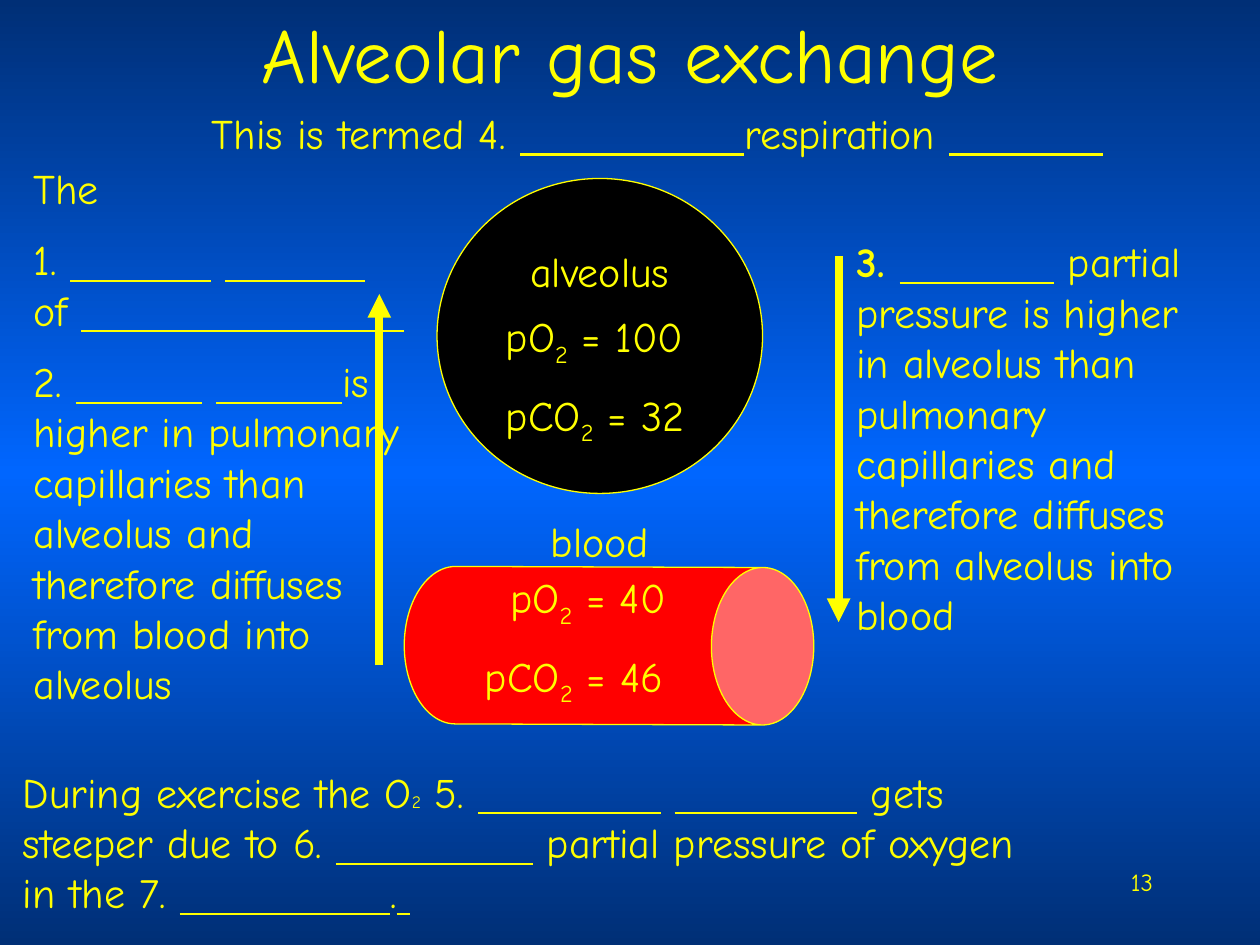
"""Build the alveolar gas exchange slide with fill-in blanks."""
import copy
import pptx
import pptx.util
import pptx.dml.color
import pptx.enum.shapes
import pptx.enum.text
import pptx.oxml.ns

YELLOW = pptx.dml.color.RGBColor(0xFF, 0xFF, 0x00)
BLACK = pptx.dml.color.RGBColor(0x00, 0x00, 0x00)
RED = pptx.dml.color.RGBColor(0xFF, 0x00, 0x00)
NAVY = pptx.dml.color.RGBColor(0x00, 0x2F, 0x76)
BLUE = pptx.dml.color.RGBColor(0x00, 0x66, 0xFF)
PX = 9525
SHAPE = pptx.enum.shapes.MSO_SHAPE
ALIGN = pptx.enum.text.PP_ALIGN
LEFT, CENTER, RIGHT = ALIGN.LEFT, ALIGN.CENTER, ALIGN.RIGHT
qn = pptx.oxml.ns.qn


def px(*values):
    return [v * PX for v in values]


def write(p, runs, align, size=24):
    """Write runs into p; a number is an underlined blank, a tuple has a format."""
    p.alignment = align
    for run in runs:
        text, fmt = run if isinstance(run, tuple) else (run, {})
        if isinstance(text, int):
            text, fmt = " " * text, {"underline": True}
        r = p.add_run()
        r.text = text
        r.font.color.rgb = YELLOW
        font = {"name": "Comic Neue", "size": pptx.util.Pt(size), **fmt}
        baseline = font.pop("baseline", None)
        for name, value in font.items():
            setattr(r.font, name, value)
        if baseline:
            r.font._element.set("baseline", baseline)


prs = pptx.Presentation()
prs.slide_width, prs.slide_height = px(960, 720)
s = prs.slides.add_slide(prs.slide_layouts[5])

fill = s.background.fill
fill.gradient()
fill.gradient_angle = 270
stops = s._element.find(".//" + qn("a:gsLst"))
stops.append(copy.deepcopy(stops[-1]))
for stop, position, color in zip(fill.gradient_stops, (0, 0.5, 1), (NAVY, BLUE, NAVY)):
    stop.position = position
    stop.color.rgb = color

title = s.shapes.title
title.left, title.top, title.width, title.height = px(72, 8, 816, 64)
title.text_frame.vertical_anchor = pptx.enum.text.MSO_ANCHOR.MIDDLE
write(title.text_frame.paragraphs[0], ["Alveolar gas exchange"], CENTER, 44)

for kind, box, color, rotation in [
    (SHAPE.OVAL, (333, 136, 248, 240), BLACK, 0),
    (SHAPE.CAN, (404, 336, 120, 312), RED, 90.2),
]:
    sp = s.shapes.add_shape(kind, *px(*box))
    sp.shadow.inherit = False
    sp.rotation = rotation
    sp.fill.solid()
    sp.fill.fore_color.rgb = color
    sp.line.color.rgb = YELLOW
    sp.line.width = pptx.util.Pt(0.75)
    if kind == SHAPE.CAN:
        sp.adjustments[0] = 0.65

for x, start, end in [(289, 507, 224), (639, 195, 474)]:
    arrow = s.shapes.add_connector(
        pptx.enum.shapes.MSO_CONNECTOR.STRAIGHT, *px(x, start, x, end))
    arrow.line.color.rgb = YELLOW
    arrow.line.width = pptx.util.Pt(4.5)
    ln = arrow.line._get_or_add_ln()
    ln.append(ln.makeelement(qn("a:tailEnd"), {"type": "triangle"}))
    spPr = arrow._element.spPr
    spPr.append(spPr.makeelement(qn("a:effectLst"), {}))

SUB = ("2", {"baseline": "-25000"})
SMALL = ("2", {"size": pptx.util.Pt(10)})
texts = [
    ((688, 656, 200, 48), 14, [(RIGHT, ["13"])]),
    ((369, 182, 176, 48), 24, [(CENTER, ["alveolus"])]),
    ((357, 388, 200, 48), 24, [(CENTER, ["blood"])]),
    ((376, 232, 176, 106), 24, [
        (LEFT, ["pO", SUB, " = 100"]),
        (LEFT, ["pCO", SUB, " = 32"])]),
    ((360, 431, 176, 106), 24, [
        (CENTER, ["pO", SUB, " = 40"]),
        (LEFT, ["pCO", SUB, " = 46"])]),
    ((16, 119, 303, 437), 24, [
        (LEFT, ["The"]),
        (LEFT, ["1. ", 10, " ", 10, " of ", 23]),
        (LEFT, ["2. ", 9, " ", 9,
                "is higher in pulmonary capillaries than alveolus "
                "and therefore diffuses from blood into alveolus"])]),
    ((643, 175, 296, 320), 24, [
        (LEFT, [("3. ", {"bold": True}), 11,
                " partial pressure is higher in alveolus than pulmonary "
                "capillaries and therefore diffuses from alveolus into blood"])]),
    ((152, 77, 704, 48), 24, [
        (LEFT, ["This is termed 4. ", 16, "respiration ", 12])]),
    ((8, 579, 800, 126), 24, [
        (LEFT, ["During exercise the O", SMALL, " 5. ", 13, " ", 13,
                " gets steeper due to 6. ", 14,
                " partial pressure of oxygen in the 7. ", 15, ".", 1])]),
]
for box, size, paragraphs in texts:
    tf = s.shapes.add_textbox(*px(*box)).text_frame
    tf.word_wrap = True
    for i, (align, runs) in enumerate(paragraphs):
        p = tf.add_paragraph() if i else tf.paragraphs[0]
        p.space_before = pptx.util.Pt(12 if i else 0)
        write(p, runs, align, size)

prs.save("out.pptx")
